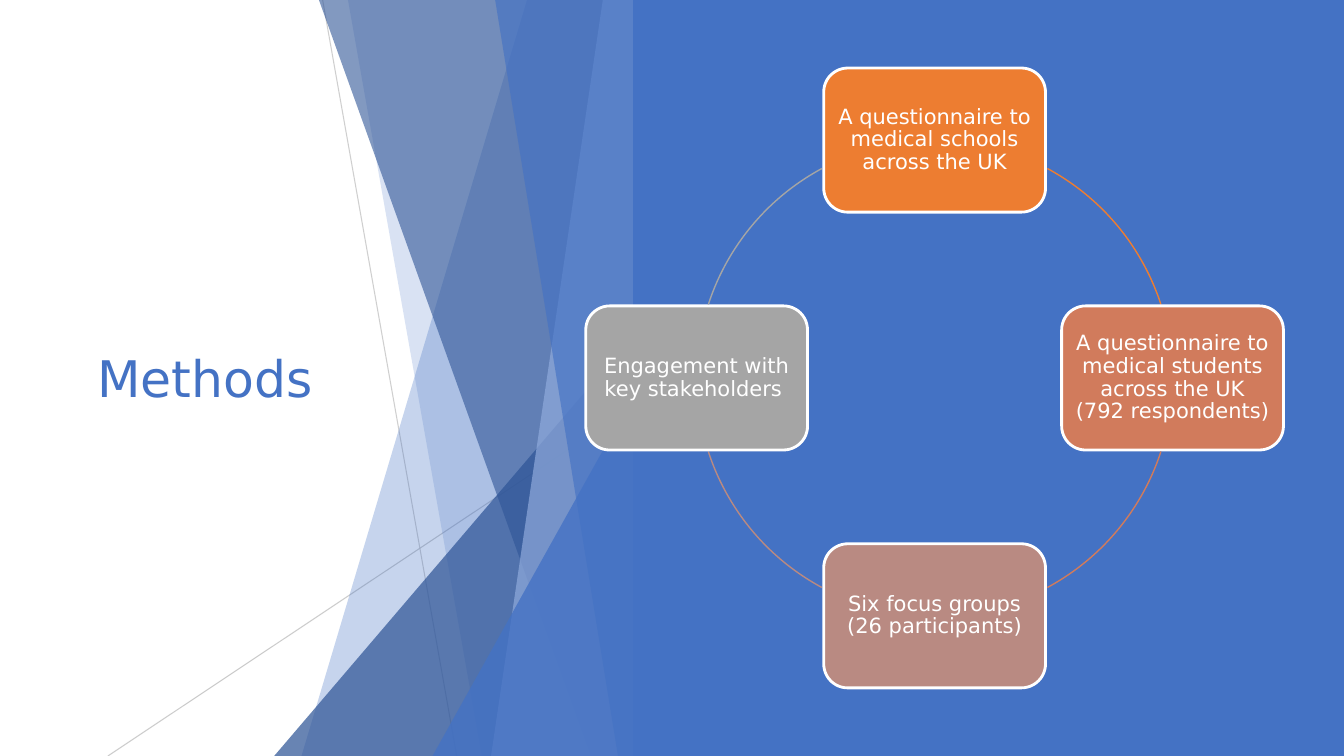
import math

from lxml import etree
from pptx import Presentation
from pptx.dml.color import RGBColor
from pptx.enum import shapes, text
from pptx.oxml import ns
from pptx.util import Inches, Pt

BLUE = RGBColor(0x44, 0x72, 0xC4)
DARK_BLUE = RGBColor(0x2F, 0x55, 0x97)
LIGHT_BLUE = RGBColor(0x8F, 0xAA, 0xDC)
ORANGE = RGBColor(0xED, 0x7D, 0x31)
TERRACOTTA = RGBColor(0xD1, 0x7B, 0x5C)
ROSE = RGBColor(0xB9, 0x8A, 0x82)
GREY = RGBColor(0xA5, 0xA5, 0xA5)
PALE_GREY = RGBColor(0xBF, 0xBF, 0xBF)
WHITE = RGBColor(0xFF, 0xFF, 0xFF)
FONT = "DejaVu Sans"

# Content
HEADING = "Methods"
METHODS = [  # clockwise from the top
    ("A questionnaire to medical schools across the UK", ORANGE),
    ("A questionnaire to medical students across the UK (792 respondents)", TERRACOTTA),
    ("Six focus groups (26 participants)", ROSE),
    ("Engagement with key stakeholders ", GREY),
]

# Decoration: thin lines as start, end, opacity
RAYS = [((3.2, 0), (4.53, 7.5), 75), ((6.28, 4.03), (1.07, 7.5), 80)]
# Bands: top x, bottom x; wedges: left, top; then colour, opacity
FACETS = [
    ("band", 5.23, 2.99, BLUE, 30),
    ("band", 3.45, 4.78, BLUE, 20),
    ("wedge", 2.72, 3.33, DARK_BLUE, 72),
    ("band", 3.16, 5.86, DARK_BLUE, 60),
    ("band", 5.98, 4.87, LIGHT_BLUE, 70),
    ("band", 4.91, 6.13, BLUE, 65),
    ("wedge", 4.29, 3.93, BLUE, 80),
]

# Geometry
SLIDE_W, SLIDE_H = 13.33, 7.5
PANEL_X = 6.28
FACET_TOP = -0.01
CENTRE_X, CENTRE_Y, RADIUS = 9.27, 3.75, 2.36
CARD_W, CARD_H = 2.2, 1.43
CARD_INSET = 0.06  # the rounded corners add their own margin
ARC_CLEARANCE = (28.3, 18)  # degrees beside top/bottom cards, side cards
ARC_UNIT = 0.6  # adjustment per degree


def set_opacity(fill_owner, percent):
    colour = fill_owner.find(".//" + ns.qn("a:srgbClr"))
    etree.SubElement(colour, ns.qn("a:alpha")).set("val", str(percent * 1000))


def paint(shape, colour, opacity=None):
    shape.shadow.inherit = False
    shape.fill.solid()
    shape.fill.fore_color.rgb = colour
    shape.line.fill.background()
    if opacity is not None:
        set_opacity(shape.fill._xPr, opacity)


def write(frame, words, size, colour, spacing=1.0, inset=0.1):
    frame.word_wrap = True
    frame.auto_size = text.MSO_AUTO_SIZE.NONE
    frame.vertical_anchor = text.MSO_ANCHOR.MIDDLE
    frame.margin_left = frame.margin_right = Inches(inset)
    frame.margin_top = frame.margin_bottom = Inches(inset)
    paragraph = frame.paragraphs[0]
    paragraph.alignment = text.PP_ALIGN.CENTER
    paragraph.line_spacing = spacing
    run = paragraph.add_run()
    run.text = words
    run.font.name = FONT
    run.font.size = Pt(size)
    run.font.color.rgb = colour


def add_preset(slide, preset, left, top, width, height):
    return slide.shapes.add_shape(
        preset, Inches(left), Inches(top), Inches(width), Inches(height))


def add_ray(slide, start, end, opacity):
    ray = slide.shapes.add_connector(
        shapes.MSO_CONNECTOR.STRAIGHT, *map(Inches, start + end))
    ray.line.color.rgb = PALE_GREY
    ray.line.width = Pt(0.75)
    properties = ray._element.spPr
    set_opacity(properties, opacity)
    etree.SubElement(properties, ns.qn("a:effectLst"))


def add_facet(slide, kind, first, second, colour, opacity):
    if kind == "wedge":
        facet = add_preset(slide, shapes.MSO_SHAPE.ISOSCELES_TRIANGLE,
                           first, second, PANEL_X - first, SLIDE_H - second)
        facet.adjustments[0] = 1
    else:
        corners = [(first, FACET_TOP), (PANEL_X, FACET_TOP),
                   (PANEL_X, SLIDE_H), (second, SLIDE_H)]
        points = [(Inches(x), Inches(y)) for x, y in corners]
        outline = slide.shapes.build_freeform(*points[0])
        outline.add_line_segments(points[1:], close=True)
        facet = outline.convert_to_shape()
    paint(facet, colour, opacity)


def add_method(slide, position, words, colour):
    direction = 270 + 90 * position
    angle = math.radians(direction)
    card = add_preset(slide, shapes.MSO_SHAPE.ROUNDED_RECTANGLE,
                      CENTRE_X + RADIUS * math.cos(angle) - CARD_W / 2,
                      CENTRE_Y + RADIUS * math.sin(angle) - CARD_H / 2,
                      CARD_W, CARD_H)
    paint(card, colour)
    card.line.color.rgb = WHITE
    card.line.width = Pt(2)
    write(card.text_frame, words, 15, WHITE, spacing=0.9, inset=CARD_INSET)

    # Arc towards the next card
    arc = add_preset(slide, shapes.MSO_SHAPE.ARC, CENTRE_X - RADIUS,
                     CENTRE_Y - RADIUS, 2 * RADIUS, 2 * RADIUS)
    start = direction + ARC_CLEARANCE[position % 2]
    end = direction + 90 - ARC_CLEARANCE[(position + 1) % 2]
    arc.adjustments[0] = start % 360 * ARC_UNIT
    arc.adjustments[1] = end % 360 * ARC_UNIT
    arc.shadow.inherit = False
    arc.fill.background()
    arc.line.color.rgb = colour
    arc.line.width = Pt(1)


def main():
    deck = Presentation()
    deck.slide_width, deck.slide_height = Inches(SLIDE_W), Inches(SLIDE_H)
    slide = deck.slides.add_slide(deck.slide_layouts[5])

    # Faceted backdrop
    for ray in RAYS:
        add_ray(slide, *ray)
    for facet in FACETS:
        add_facet(slide, *facet)

    # Title
    heading = slide.shapes.title
    heading.left, heading.top = Inches(0.1), Inches(1.5)
    heading.width, heading.height = Inches(3.87), Inches(4.48)
    write(heading.text_frame, HEADING, 36, BLUE)

    # Panel and cycle of methods
    panel = add_preset(slide, shapes.MSO_SHAPE.RECTANGLE,
                       PANEL_X, 0, SLIDE_W - PANEL_X, SLIDE_H)
    paint(panel, BLUE)
    for position, (words, colour) in enumerate(METHODS):
        add_method(slide, position, words, colour)

    deck.save("out.pptx")


if __name__ == "__main__":
    main()
